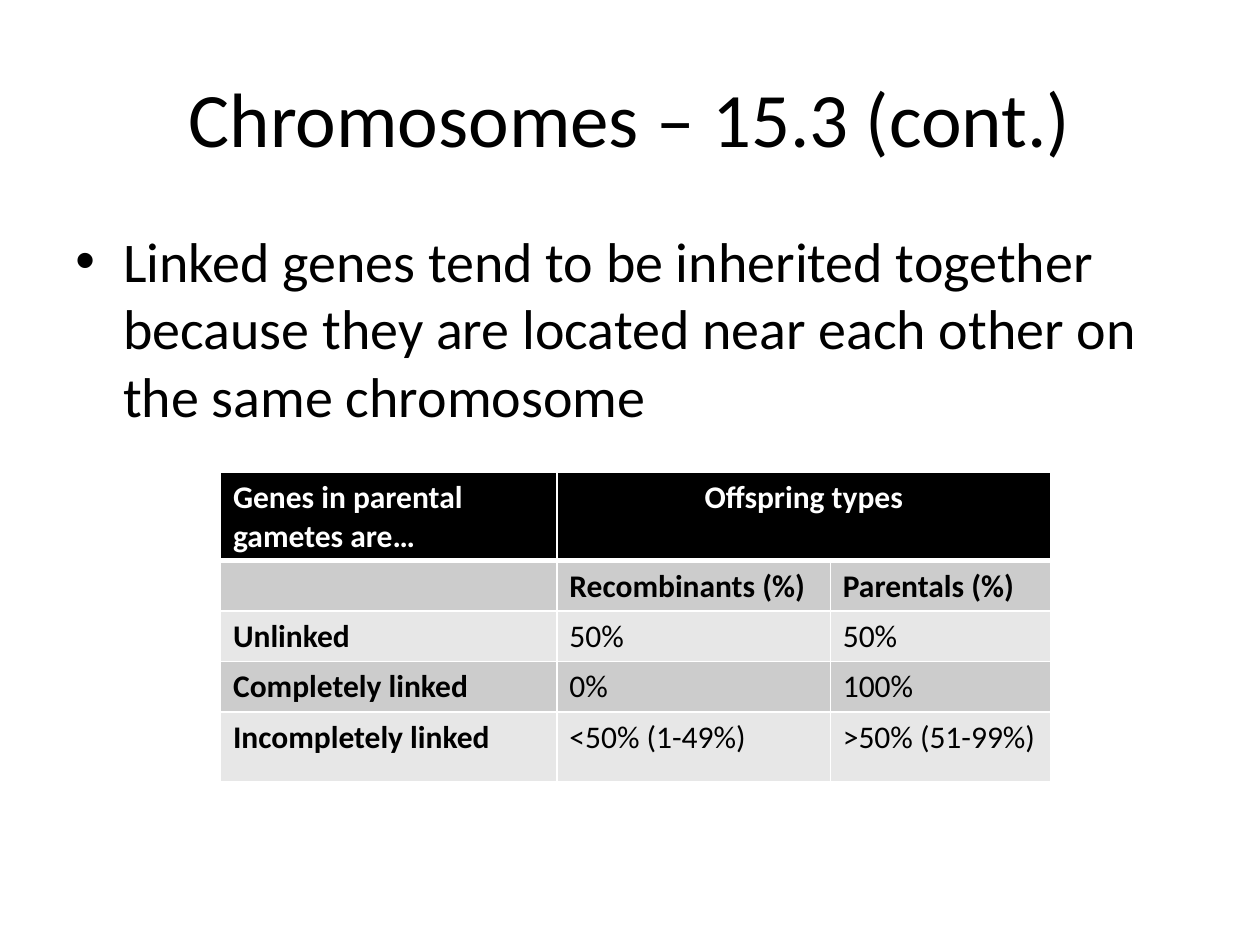
from lxml import etree
from pptx import Presentation
from pptx import util as u
from pptx.dml.color import RGBColor
from pptx.enum import text
from pptx.oxml.ns import qn

BLACK = RGBColor(0, 0, 0)
WHITE = RGBColor(255, 255, 255)
DARK = RGBColor(0xCC, 0xCC, 0xCC)
LIGHT = RGBColor(0xE7, 0xE7, 0xE7)
FONT = "Calibri"

COLS = [2.67, 2.17, 1.75]
HEIGHTS = [0.7, 0.4, 0.4, 0.4, 0.55]
ROWS = [
    ["Genes in parental gametes are…", "Offspring types", ""],
    ["", "Recombinants (%)", "Parentals (%)"],
    ["Unlinked", "50%", "50%"],
    ["Completely linked", "0%", "100%"],
    ["Incompletely linked", "<50% (1-49%)", ">50% (51-99%)"],
]


def style(para, size, color=BLACK, bold=False):
    for run in para.runs:
        font = run.font
        font.name, font.size, font.bold = FONT, u.Pt(size), bold
        font.color.rgb = color


def add_text(slide, words, box, size):
    frame = slide.shapes.add_textbox(*map(u.Inches, box)).text_frame
    frame.word_wrap = True
    frame.text = words
    para = frame.paragraphs[0]
    style(para, size)
    return frame, para


def add_bullet(para):
    """Give the paragraph a hanging bullet and proportional space before."""
    props = para._p.get_or_add_pPr()
    props.set("marL", str(u.Inches(0.38)))
    props.set("indent", str(-u.Inches(0.38)))
    space = etree.SubElement(props, qn("a:spcBef"))
    etree.SubElement(space, qn("a:spcPct"), val="20000")
    etree.SubElement(props, qn("a:buFont"), typeface="Arial")
    etree.SubElement(props, qn("a:buChar"), char="•")


def add_border(cell, head):
    props = cell._tc.get_or_add_tcPr()
    for side in "LRTB":
        width = 3 if head and side == "B" else 1
        line = etree.SubElement(props, qn("a:ln" + side), w=str(u.Pt(width)))
        fill = etree.SubElement(line, qn("a:solidFill"))
        etree.SubElement(fill, qn("a:srgbClr"), val=str(WHITE))


def fill_cell(cell, words, row, col):
    head = row == 0
    add_border(cell, head)
    cell.fill.solid()
    cell.fill.fore_color.rgb = BLACK if head else DARK if row % 2 else LIGHT
    cell.text = words
    para = cell.text_frame.paragraphs[0]
    style(para, 18, WHITE if head else BLACK, row < 2 or col == 0)
    if head and col:
        para.alignment = text.PP_ALIGN.CENTER


def add_grid(slide):
    box = map(u.Inches, (1.75, 3.75, sum(COLS), sum(HEIGHTS)))
    grid = slide.shapes.add_table(len(ROWS), len(COLS), *box).table
    for col, width in zip(grid.columns, COLS):
        col.width = u.Inches(width)
    for row, height in zip(grid.rows, HEIGHTS):
        row.height = u.Inches(height)
    grid.cell(0, 1).merge(grid.cell(0, 2))
    for i, row in enumerate(ROWS):
        for j, words in enumerate(row):
            fill_cell(grid.cell(i, j), words, i, j)


def main():
    deck = Presentation()
    deck.slide_width, deck.slide_height = u.Inches(10), u.Inches(7.5)
    slide = deck.slides.add_slide(deck.slide_layouts[6])

    frame, title = add_text(slide, "Chromosomes – 15.3 (cont.)",
                            (0.5, 0.3, 9, 1.25), 44)
    frame.vertical_anchor = text.MSO_ANCHOR.MIDDLE
    title.alignment = text.PP_ALIGN.CENTER

    _, body = add_text(
        slide,
        "Linked genes tend to be inherited together because they are "
        "located near each other on the same chromosome",
        (0.5, 1.75, 9, 4.95), 32)
    add_bullet(body)

    add_grid(slide)
    deck.save("out.pptx")


if __name__ == "__main__":
    main()
